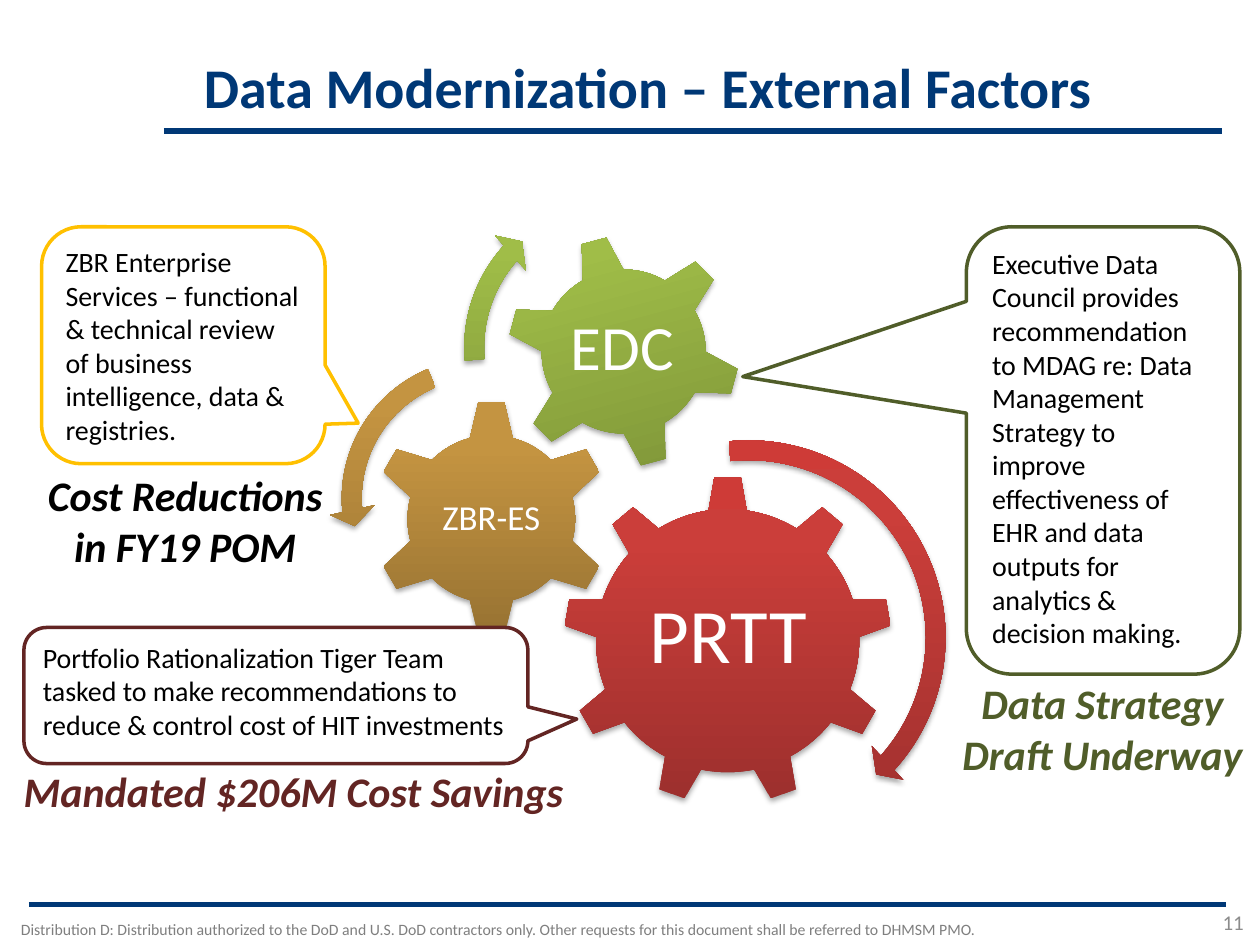
from lxml.etree import SubElement
from pptx import Presentation
from pptx.dml.color import RGBColor
from pptx.enum.shapes import MSO_CONNECTOR, MSO_SHAPE
from pptx.enum.text import MSO_ANCHOR as ANCHOR, PP_ALIGN as ALIGN
from pptx.oxml import parse_xml
from pptx.oxml.ns import nsdecls, qn
from pptx.util import Inches, Pt

COLORS = {
    "navy": "003876", "footer": "7F7F7F", "number": "8C8C8C",
    "white": "FFFFFF", "black": "000000",
    "maroon": "632523", "amber": "FFC000", "olive": "505D29",
}
GRADIENTS = {
    "red": ((0, "9C2F2D"), (80, "CB3E3A"), (100, "CE3B37")),
    "gold": ((0, "977232"), (80, "C49441"), (100, "C7963F")),
    "green": ((0, "7B9137"), (80, "A0BD48"), (100, "A2C046")),
}


def rgb(name):
    return RGBColor.from_string(COLORS[name])


def write(frame, text, size, color, align=ALIGN.LEFT, anchor=ANCHOR.TOP,
          bold=False, italic=False, spacing=None):
    frame.word_wrap = True
    frame.vertical_anchor = anchor
    frame.text = text
    paragraph = frame.paragraphs[0]
    paragraph.alignment = align
    if spacing:
        paragraph.line_spacing = spacing
    font = paragraph.runs[0].font
    font.name, font.size = "Calibri", Pt(size)
    font.bold, font.italic = bold, italic
    font.color.rgb = rgb(color)


def add_label(slide, box, text, size, color, inset=None, **style):
    label = slide.shapes.add_textbox(*map(Inches, box))
    frame = label.text_frame
    if inset is not None:
        frame.margin_left = frame.margin_right = Inches(inset)
        frame.margin_top = frame.margin_bottom = Inches(inset)
    write(frame, text, size, color, **style)
    return label


def add_rule(slide, left, right, y):
    rule = slide.shapes.add_connector(
        MSO_CONNECTOR.STRAIGHT, Inches(left), Inches(y), Inches(right), Inches(y))
    rule.line.color.rgb = rgb("navy")
    rule.line.width = Pt(3)
    SubElement(rule._element.spPr, qn("a:effectLst"))


def add_wheel_part(slide, kind, left, top, size, gradient, adjustments=(), rotation=0):
    part = slide.shapes.add_shape(
        kind, Inches(left), Inches(top), Inches(size), Inches(size))
    part.rotation = rotation
    for index, value in enumerate(adjustments):
        part.adjustments[index] = value
    stops = "".join(
        f'<a:gs pos="{position * 1000}"><a:srgbClr val="{color}"/></a:gs>'
        for position, color in GRADIENTS[gradient])
    properties = part._element.spPr
    properties.append(parse_xml(
        f'<a:gradFill {nsdecls("a")} rotWithShape="1"><a:gsLst>{stops}</a:gsLst>'
        '<a:lin ang="16200000" scaled="0"/></a:gradFill>'))
    part.line.fill.background()
    properties.append(parse_xml(
        f'<a:effectLst {nsdecls("a")}><a:outerShdw blurRad="{Pt(3.1)}" '
        f'dist="{Pt(1.8)}" dir="5400000" rotWithShape="0"><a:srgbClr val="000000">'
        '<a:alpha val="35000"/></a:srgbClr></a:outerShdw></a:effectLst>'))


def add_callout(slide, box, tip, color, text):
    callout = slide.shapes.add_shape(
        MSO_SHAPE.ROUNDED_RECTANGULAR_CALLOUT, *map(Inches, box))
    callout.shadow.inherit = False
    callout.adjustments[0], callout.adjustments[1] = tip
    callout.fill.solid()
    callout.fill.fore_color.rgb = rgb("white")
    callout.line.color.rgb = rgb(color)
    callout.line.width = Pt(2)
    write(callout.text_frame, text, 16, "black")


def add_outcome(slide, box, text, color):
    outcome = add_label(slide, box, text, 24, color, align=ALIGN.CENTER,
                        bold=True, italic=True)
    run = outcome.text_frame.paragraphs[0].runs[0]
    run.font._element.insert(0, parse_xml(
        f'<a:ln {nsdecls("a")} w="{Pt(0.75)}"><a:solidFill>'
        f'<a:srgbClr val="{COLORS["white"]}"/></a:solidFill></a:ln>'))


def add_frame(slide):
    add_rule(slide, 0.23, 9.73, 7.18)
    add_rule(slide, 1.3, 9.7, 1.04)
    add_label(slide, (0, 7.25, 7.9, 0.25),
              "Distribution D: Distribution authorized to the DoD and U.S. DoD "
              "contractors only. Other requests for this document shall be "
              "referred to DHMSM PMO.", 9, "footer", align=ALIGN.CENTER)
    add_label(slide, (1.52, 0.01, 8.19, 1), "Data Modernization – External Factors",
              32, "navy", anchor=ANCHOR.BOTTOM, bold=True, spacing=0.9)
    add_label(slide, (9.14, 7.16, 0.83, 0.31), "11", 12, "number",
              align=ALIGN.RIGHT, anchor=ANCHOR.BOTTOM)


def add_gears(slide):
    gears = (
        (MSO_SHAPE.GEAR_9, 4.47, 3.78, 2.61, "red", 0,
         "PRTT", (5, 4.4, 1.56, 1.34), 44, 0.06),
        (MSO_SHAPE.GEAR_6, 2.95, 3.17, 1.9, "gold", 0,
         "ZBR-ES", (3.43, 3.65, 0.94, 0.94), 20, 0.03),
        (MSO_SHAPE.GEAR_6, 4.02, 1.86, 1.86, "green", 345,
         "EDC", (4.42, 2.26, 1.04, 1.04), 36, 0.05),
    )
    for kind, left, top, size, gradient, rotation, name, box, points, inset in gears:
        add_wheel_part(slide, kind, left, top, size, gradient, rotation=rotation)
        add_label(slide, box, name, points, "white", inset, align=ALIGN.CENTER,
                  anchor=ANCHOR.MIDDLE, spacing=0.9)

    arrows = (
        (MSO_SHAPE.CIRCULAR_ARROW, 4.27, 3.39, 3.34, "red",
         (0.047, 2.99, 25.197, 158.538, 0.055)),
        (MSO_SHAPE.LEFT_CIRCULAR_ARROW, 2.61, 2.74, 2.43, "gold",
         (0.065, 4.3, 104.891, 148.378, 0.075)),
        (MSO_SHAPE.CIRCULAR_ARROW, 3.58, 1.45, 2.62, "green",
         (0.06, 3.941, 133.138, 105.082, 0.07)),
    )
    for arrow in arrows:
        add_wheel_part(slide, *arrow)


def main():
    deck = Presentation()
    deck.slide_width, deck.slide_height = Inches(10), Inches(7.5)
    slide = deck.slides.add_slide(deck.slide_layouts[6])
    add_frame(slide)
    add_gears(slide)

    add_callout(slide, (0.19, 4.98, 4, 1.08), (0.597, 0.173), "maroon",
                "Portfolio Rationalization Tiger Team tasked to make "
                "recommendations to reduce & control cost of HIT investments")
    add_callout(slide, (0.33, 1.8, 2.25, 1.88), (0.617, 0.329), "amber",
                "ZBR Enterprise Services – functional & technical review of "
                "business intelligence, data & registries.")
    add_callout(slide, (7.67, 1.8, 2.17, 3.55), (-1.318, -0.165), "olive",
                "Executive Data Council provides recommendation to MDAG re: Data "
                "Management Strategy to improve effectiveness of EHR and data "
                "outputs for analytics & decision making.")

    add_outcome(slide, (-0.38, 6.03, 5.42, 0.5), "Mandated $206M Cost Savings", "maroon")
    add_outcome(slide, (0.27, 3.68, 2.4, 0.91), "Cost Reductions in FY19 POM", "black")
    add_outcome(slide, (7.43, 5.33, 2.64, 0.91), "Data Strategy Draft Underway", "olive")
    deck.save("out.pptx")


if __name__ == "__main__":
    main()
